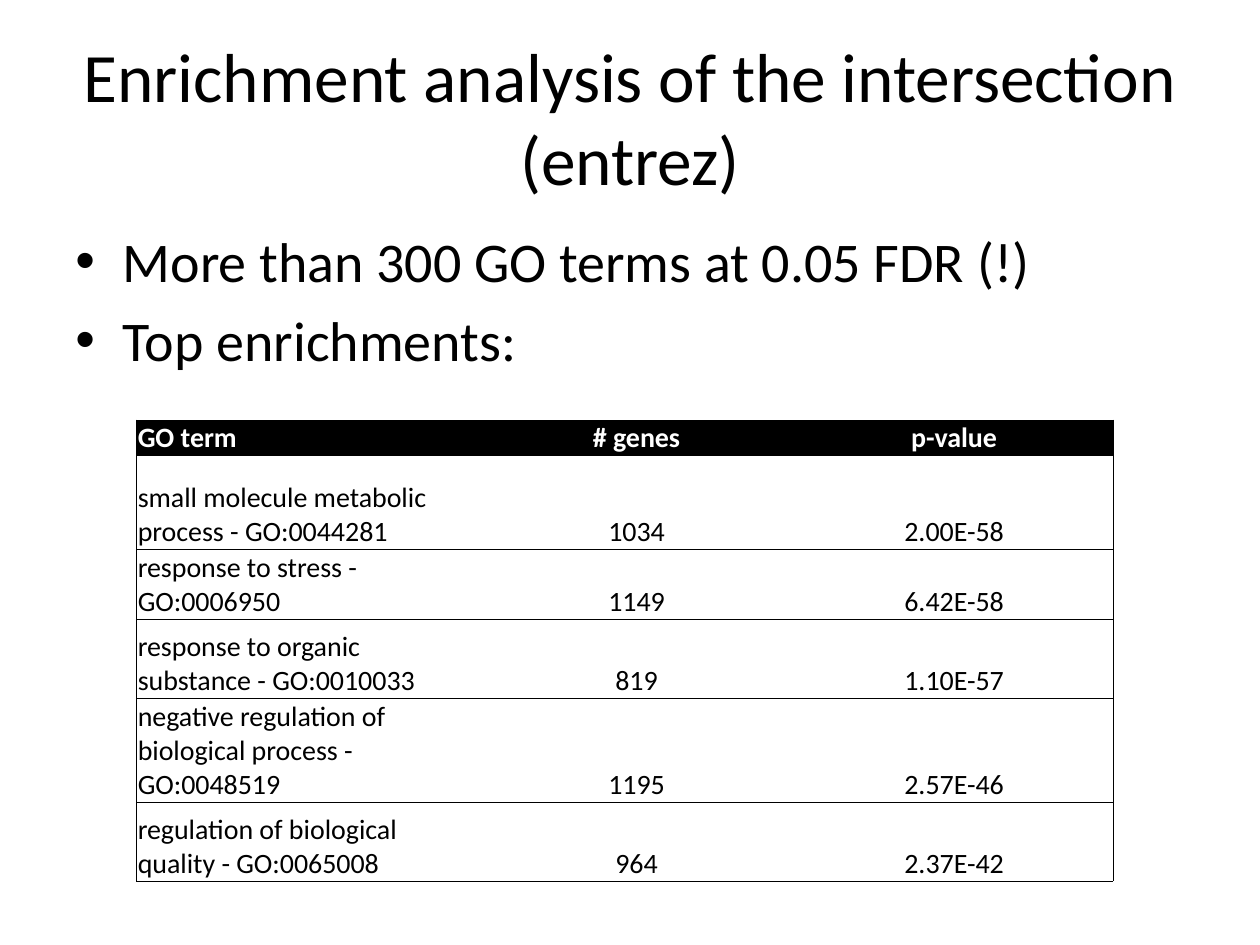
import dataclasses

import pptx
import pptx.dml.color
import pptx.enum.text
import pptx.oxml.ns
import pptx.oxml.xmlchemy
import pptx.util
from lxml import etree

Pt = pptx.util.Pt
ALIGN = pptx.enum.text.PP_ALIGN
ANCHOR = pptx.enum.text.MSO_ANCHOR
qn = pptx.oxml.ns.qn


@dataclasses.dataclass(frozen=True)
class Theme:
    """Colours, font and type sizes of the slide."""
    font: str = "Calibri"
    ink: str = "000000"
    paper: str = "FFFFFF"
    title: float = 39.6
    body: float = 32
    table: float = 16
    rule: float = 0.5


THEME = Theme()
TITLE = "Enrichment analysis of the intersection (entrez)"
BULLETS = ["More than 300 GO terms at 0.05 FDR (!)", "Top enrichments:"]
ENRICHMENTS = [
    ("GO term", "# genes", "p-value"),
    ("small molecule metabolic process - GO:0044281", "1034", "2.00E-58"),
    ("response to stress - GO:0006950", "1149", "6.42E-58"),
    ("response to organic substance - GO:0010033", "819", "1.10E-57"),
    ("negative regulation of biological process - GO:0048519", "1195", "2.57E-46"),
    ("regulation of biological quality - GO:0065008", "964", "2.37E-42"),
]
COLUMN_WIDTHS = [195, 181.5, 181.5]
ROW_HEIGHTS = [20, 54, 40, 45, 59.5, 45]


def rgb(value):
    """Turn a hex string into a colour."""
    return pptx.dml.color.RGBColor.from_string(value)


def write(para, text, *, size, color=THEME.ink, bold=False, align=ALIGN.LEFT):
    """Put formatted text into a paragraph."""
    para.alignment = align
    span = para.add_run()
    span.text = text
    span.font.name = THEME.font
    span.font.size = Pt(size)
    span.font.bold = bold
    span.font.color.rgb = rgb(color)


def add_box(slide, left, top, width, height, anchor):
    """Add a wrapping text box and return its text frame."""
    box = slide.shapes.add_textbox(Pt(left), Pt(top), Pt(width), Pt(height))
    frame = box.text_frame
    frame.word_wrap = True
    frame.vertical_anchor = anchor
    return frame


def add_title(slide):
    """Add the centred title."""
    frame = add_box(slide, 36, 21.6, 648, 90, ANCHOR.MIDDLE)
    write(frame.paragraphs[0], TITLE, size=THEME.title, align=ALIGN.CENTER)


def add_bullets(slide):
    """Add the bulleted statements with hanging indents."""
    frame = add_box(slide, 36, 126, 648, 96, ANCHOR.TOP)
    for index, text in enumerate(BULLETS):
        para = frame.add_paragraph() if index else frame.paragraphs[0]
        write(para, text, size=THEME.body)
        para.space_before = Pt(THEME.body * 0.2)
        properties = para._p.get_or_add_pPr()
        properties.set("marL", str(Pt(27)))
        properties.set("indent", str(-Pt(27)))
        etree.SubElement(properties, qn("a:buFont")).set("typeface", "Arial")
        etree.SubElement(properties, qn("a:buChar")).set("char", "•")


def set_borders(cell, visible):
    """Draw the visible sides of a cell and clear the others."""
    properties = cell._tc.get_or_add_tcPr()
    for position, side in enumerate("LRTB"):
        line = etree.Element(qn(f"a:ln{side}"), w=str(Pt(THEME.rule)))
        if side in visible:
            fill = etree.SubElement(line, qn("a:solidFill"))
            etree.SubElement(fill, qn("a:srgbClr")).set("val", THEME.ink)
        else:
            etree.SubElement(line, qn("a:noFill"))
        properties.insert(position, line)


def fill_cell(cell, text, header, column):
    """Set the text, margins, fill and borders of one cell."""
    cell.margin_left = cell.margin_right = cell.margin_top = Pt(0.72)
    cell.margin_bottom = Pt(0)
    cell.vertical_anchor = ANCHOR.BOTTOM
    write(cell.text_frame.paragraphs[0], text, size=THEME.table, bold=header,
          color=THEME.paper if header else THEME.ink,
          align=ALIGN.CENTER if column else ALIGN.LEFT)
    if header:
        cell.fill.solid()
        cell.fill.fore_color.rgb = rgb(THEME.ink)
    else:
        cell.fill.background()
    set_borders(cell, ("LTB", "TB", "RTB")[column])


def add_enrichment_table(slide):
    """Add the table of top enriched terms."""
    frame = slide.shapes.add_table(
        len(ENRICHMENTS), len(COLUMN_WIDTHS), Pt(78), Pt(240),
        Pt(sum(COLUMN_WIDTHS)), Pt(sum(ROW_HEIGHTS)))
    table = frame.table
    table.horz_banding = False
    for column, width in zip(table.columns, COLUMN_WIDTHS):
        column.width = Pt(width)
    for row, height in zip(table.rows, ROW_HEIGHTS):
        row.height = Pt(height)
    for row, record in enumerate(ENRICHMENTS):
        for column, text in enumerate(record):
            fill_cell(table.cell(row, column), text, row == 0, column)


def main():
    """Build and save the deck."""
    deck = pptx.Presentation()
    deck.slide_width, deck.slide_height = Pt(720), Pt(540)
    slide = deck.slides.add_slide(deck.slide_layouts[6])
    slide.background.fill.solid()
    slide.background.fill.fore_color.rgb = rgb(THEME.paper)
    add_title(slide)
    add_bullets(slide)
    add_enrichment_table(slide)
    deck.save("out.pptx")


if __name__ == "__main__":
    main()
